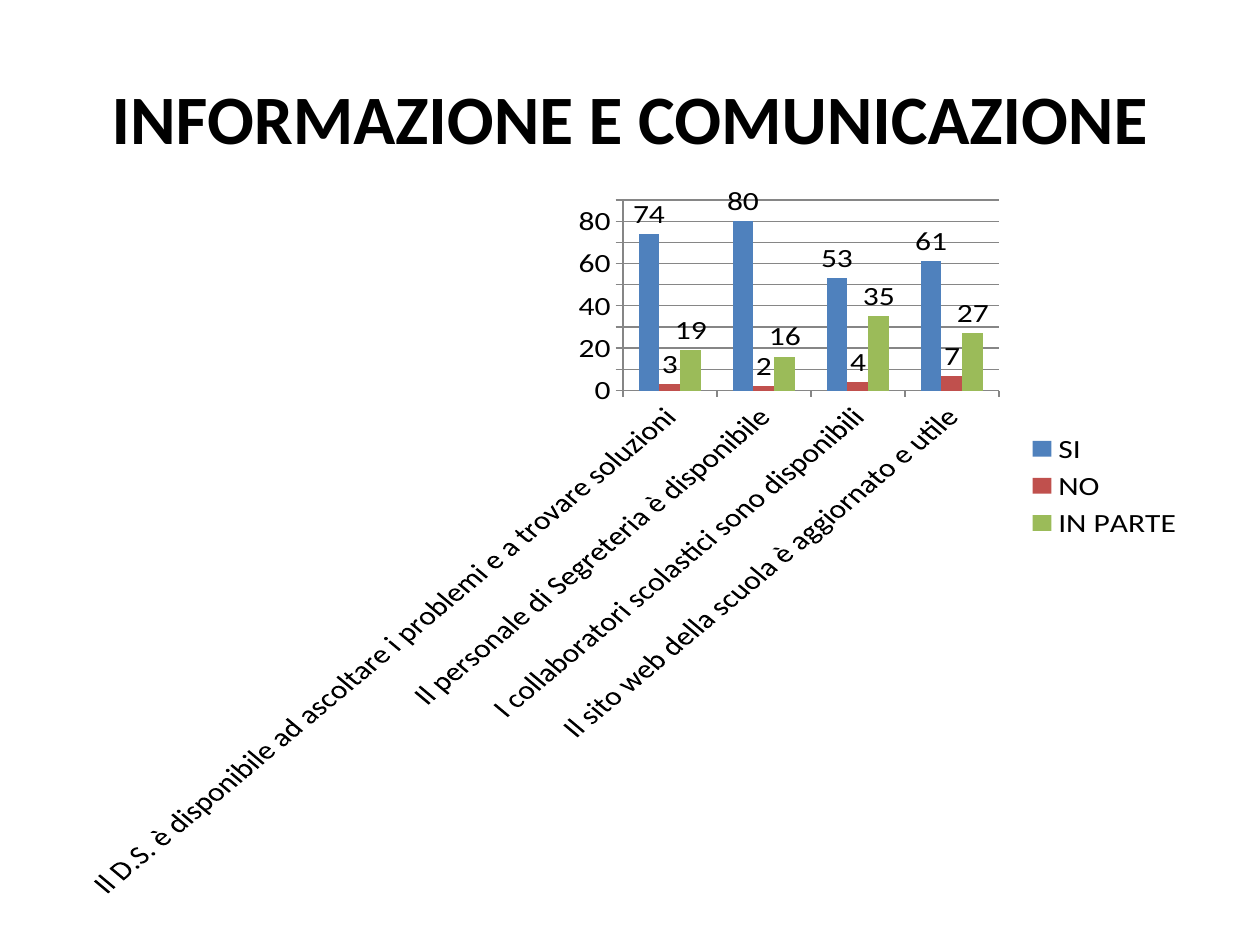
from pptx import Presentation
from pptx.chart.data import CategoryChartData
from pptx.dml.color import RGBColor
from pptx.enum.chart import (XL_CHART_TYPE, XL_LABEL_POSITION,
                             XL_LEGEND_POSITION, XL_TICK_MARK)
from pptx.enum.text import MSO_ANCHOR, PP_ALIGN
from pptx.util import Pt

BLACK = RGBColor(0x00, 0x00, 0x00)
GREY = RGBColor(0x86, 0x86, 0x86)
BLUE = RGBColor(0x4F, 0x81, 0xBD)
RED = RGBColor(0xC0, 0x50, 0x4D)
GREEN = RGBColor(0x9B, 0xBB, 0x59)
FONT = "Calibri"

QUESTIONS = [
    "Il D.S. è disponibile ad ascoltare i problemi e a trovare soluzioni",
    "Il personale di Segreteria è disponibile",
    "I collaboratori scolastici sono disponibili",
    "Il sito web della scuola è aggiornato e utile",
]
ANSWERS = [
    ("SI", (74, 80, 53, 61), BLUE),
    ("NO", (3, 2, 4, 7), RED),
    ("IN PARTE", (19, 16, 35, 27), GREEN),
]


def set_font(font, size, bold=False):
    font.name = FONT
    font.size = Pt(size)
    font.bold = bold
    font.color.rgb = BLACK


def add_title(page, text):
    box = page.shapes.add_textbox(Pt(36), Pt(21.6), Pt(648), Pt(90))
    frame = box.text_frame
    frame.word_wrap = True
    frame.vertical_anchor = MSO_ANCHOR.MIDDLE
    para = frame.paragraphs[0]
    para.text = text
    para.alignment = PP_ALIGN.CENTER
    set_font(para.font, 39.6, bold=True)


def style_axes(chart):
    for axis in (chart.category_axis, chart.value_axis):
        axis.major_tick_mark = XL_TICK_MARK.OUTSIDE
        axis.minor_tick_mark = XL_TICK_MARK.NONE
        axis.format.line.color.rgb = GREY
        set_font(axis.tick_labels.font, 18)

    # Slanted question labels
    body = chart.category_axis._element.txPr.bodyPr
    body.set("rot", "-2700000")
    body.set("vert", "horz")

    scale = chart.value_axis
    scale.minimum_scale, scale.maximum_scale, scale.major_unit = 0, 90, 10
    scale.major_gridlines.format.line.color.rgb = GREY


def add_answer_chart(page):
    data = CategoryChartData()
    data.categories = QUESTIONS
    for name, values, _ in ANSWERS:
        data.add_series(name, values)
    chart = page.shapes.add_chart(
        XL_CHART_TYPE.COLUMN_CLUSTERED,
        Pt(36), Pt(105.84), Pt(648), Pt(408.24), data).chart
    chart.has_title = False
    set_font(chart.font, 18)
    style_axes(chart)

    # Columns with their values
    plot = chart.plots[0]
    plot.gap_width = 150
    plot.overlap = 0
    plot.vary_by_categories = False
    for series, (_, _, color) in zip(plot.series, ANSWERS):
        series.format.fill.solid()
        series.format.fill.fore_color.rgb = color
        labels = series.data_labels
        labels.show_value = True
        labels.position = XL_LABEL_POSITION.OUTSIDE_END
        set_font(labels.font, 18)

    # Legend
    chart.has_legend = True
    chart.legend.position = XL_LEGEND_POSITION.RIGHT
    chart.legend.include_in_layout = False
    set_font(chart.legend.font, 18)


def main():
    deck = Presentation()
    deck.slide_width, deck.slide_height = Pt(720), Pt(540)
    page = deck.slides.add_slide(deck.slide_layouts[6])
    add_title(page, "INFORMAZIONE E COMUNICAZIONE")
    add_answer_chart(page)
    deck.save("out.pptx")


if __name__ == "__main__":
    main()
